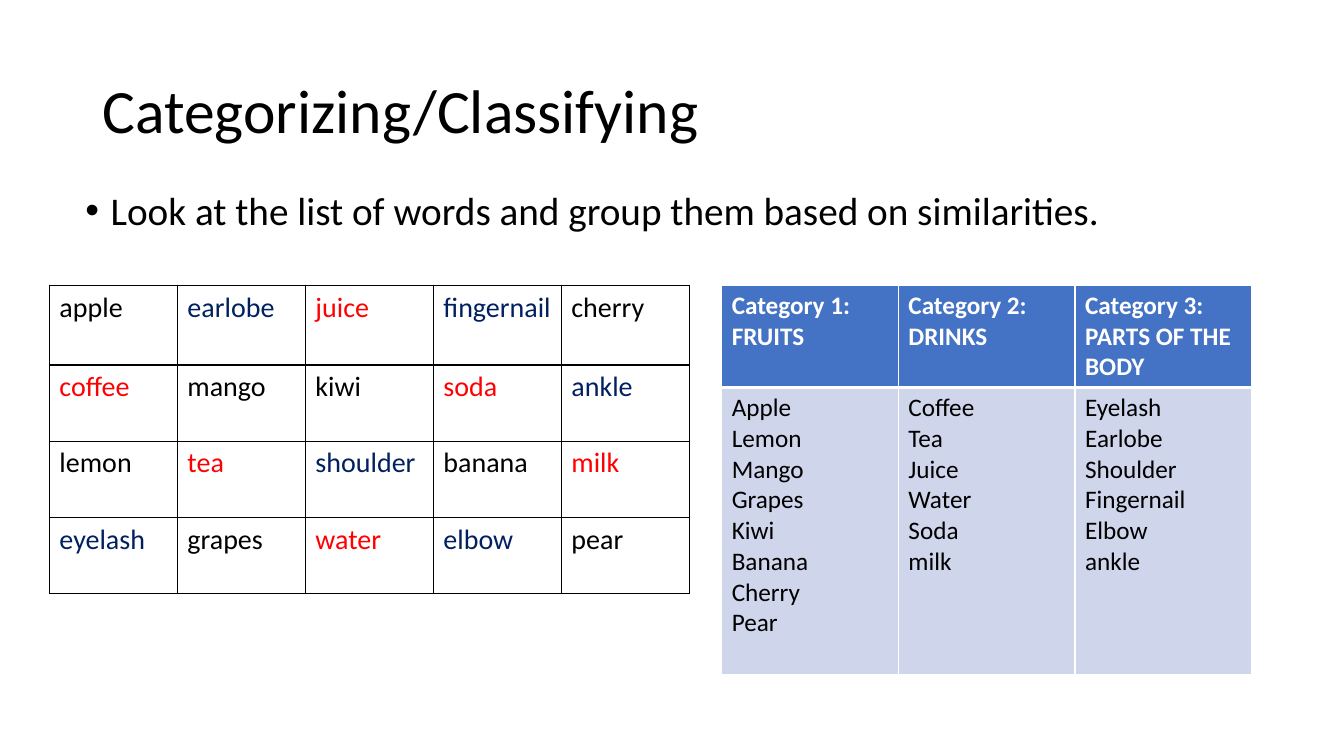
from dataclasses import dataclass

from lxml.etree import SubElement
from pptx import Presentation
from pptx.dml.color import RGBColor
from pptx.enum.text import MSO_ANCHOR
from pptx.oxml.ns import qn
from pptx.util import Pt

BLACK = RGBColor(0x00, 0x00, 0x00)
WHITE = RGBColor(0xFF, 0xFF, 0xFF)
NAVY = RGBColor(0x00, 0x20, 0x60)
RED = RGBColor(0xFF, 0x00, 0x00)
BLUE = RGBColor(0x44, 0x72, 0xC4)
PALE = RGBColor(0xCF, 0xD5, 0xEA)
FONT = "Calibri"
TOP = 203.76


@dataclass(frozen=True)
class Group:
    name: str
    color: RGBColor
    words: str


@dataclass(frozen=True)
class Grid:
    left: float
    col: float
    rows: tuple[float, ...]
    count: int


GROUPS = (
    Group("FRUITS", BLACK, "Apple Lemon Mango Grapes Kiwi Banana Cherry Pear"),
    Group("DRINKS", RED, "Coffee Tea Juice Water Soda milk"),
    Group("PARTS OF THE BODY", NAVY, "Eyelash Earlobe Shoulder Fingernail Elbow ankle"),
)
WORDS = (
    "apple earlobe juice fingernail cherry",
    "coffee mango kiwi soda ankle",
    "lemon tea shoulder banana milk",
    "eyelash grapes water elbow pear",
)
WORD_GRID = Grid(35.28, 91.44, (57, 54.4, 54.4, 54.4), 5)
GROUP_GRID = Grid(515.52, 126.2, (73, 205), len(GROUPS))


def write(frame, text: str, *, size: float, color: RGBColor = BLACK,
          bold: bool = False, line: float = 1.0, before: float = 0) -> None:
    """Fill a text frame, with one paragraph for each line of text."""
    frame.text = text
    for para in frame.paragraphs:
        para.line_spacing = line
        para.space_before = Pt(before)
        for run in para.runs:
            font = run.font
            font.name, font.size, font.bold = FONT, Pt(size), bold
            font.color.rgb = color


def edge(cell, color: RGBColor, base: float = 1) -> None:
    """Draw the cell's borders; base is the width of the bottom one."""
    props = cell._tc.get_or_add_tcPr()
    for side, width in (("L", 1), ("R", 1), ("T", 1), ("B", base)):
        line = SubElement(props, qn(f"a:ln{side}"), w=str(Pt(width)))
        fill = SubElement(line, qn("a:solidFill"))
        SubElement(fill, qn("a:srgbClr"), val=str(color))


def add_grid(slide, grid: Grid):
    frame = slide.shapes.add_table(
        len(grid.rows), grid.count, Pt(grid.left), Pt(TOP),
        Pt(grid.col * grid.count), Pt(sum(grid.rows)))
    table = frame.table
    table.first_row = table.horz_banding = False
    for col in table.columns:
        col.width = Pt(grid.col)
    for row, height in zip(table.rows, grid.rows):
        row.height = Pt(height)
    return table


def add_title(slide) -> None:
    title = slide.shapes.title
    title.left, title.top = Pt(66), Pt(28.8)
    title.width, title.height = Pt(828), Pt(104.4)
    frame = title.text_frame
    write(frame, "Categorizing/Classifying", size=44, line=0.9)
    frame.vertical_anchor = MSO_ANCHOR.MIDDLE
    frame.paragraphs[0].alignment = 1


def add_task(slide) -> None:
    box = slide.shapes.add_textbox(Pt(54), Pt(133.2), Pt(786), Pt(44))
    frame = box.text_frame
    frame.word_wrap = True
    write(frame, "Look at the list of words and group them based on similarities.",
          size=28, line=0.9, before=10)
    props = frame.paragraphs[0]._p.get_or_add_pPr()
    props.set("marL", str(Pt(18)))
    props.set("indent", str(-Pt(18)))
    SubElement(props, qn("a:buFont"), typeface="Arial")
    SubElement(props, qn("a:buChar"), char="•")


def add_words(slide) -> None:
    colors = {word: group.color for group in GROUPS
              for word in group.words.lower().split()}
    table = add_grid(slide, WORD_GRID)
    for row, line in zip(table.rows, WORDS):
        for cell, word in zip(row.cells, line.split()):
            edge(cell, BLACK)
            cell.fill.background()
            write(cell.text_frame, word, size=20, color=colors[word])


def add_groups(slide) -> None:
    table = add_grid(slide, GROUP_GRID)
    for col, group in enumerate(GROUPS):
        head, body = table.cell(0, col), table.cell(1, col)
        edge(head, WHITE, base=3)
        edge(body, WHITE)
        for cell, color in ((head, BLUE), (body, PALE)):
            cell.fill.solid()
            cell.fill.fore_color.rgb = color
        write(head.text_frame, f"Category {col + 1}:\n{group.name}",
              size=18, color=WHITE, bold=True)
        write(body.text_frame, "\n".join(group.words.split()), size=18)
        # The heavy rule belongs to both cells that share it.
        body._tc.tcPr.find(qn("a:lnT")).set("w", str(Pt(3)))


def main() -> None:
    deck = Presentation()
    deck.slide_width, deck.slide_height = Pt(960), Pt(540)
    slide = deck.slides.add_slide(deck.slide_layouts[5])
    add_title(slide)
    add_task(slide)
    add_words(slide)
    add_groups(slide)
    deck.save("out.pptx")


if __name__ == "__main__":
    main()
